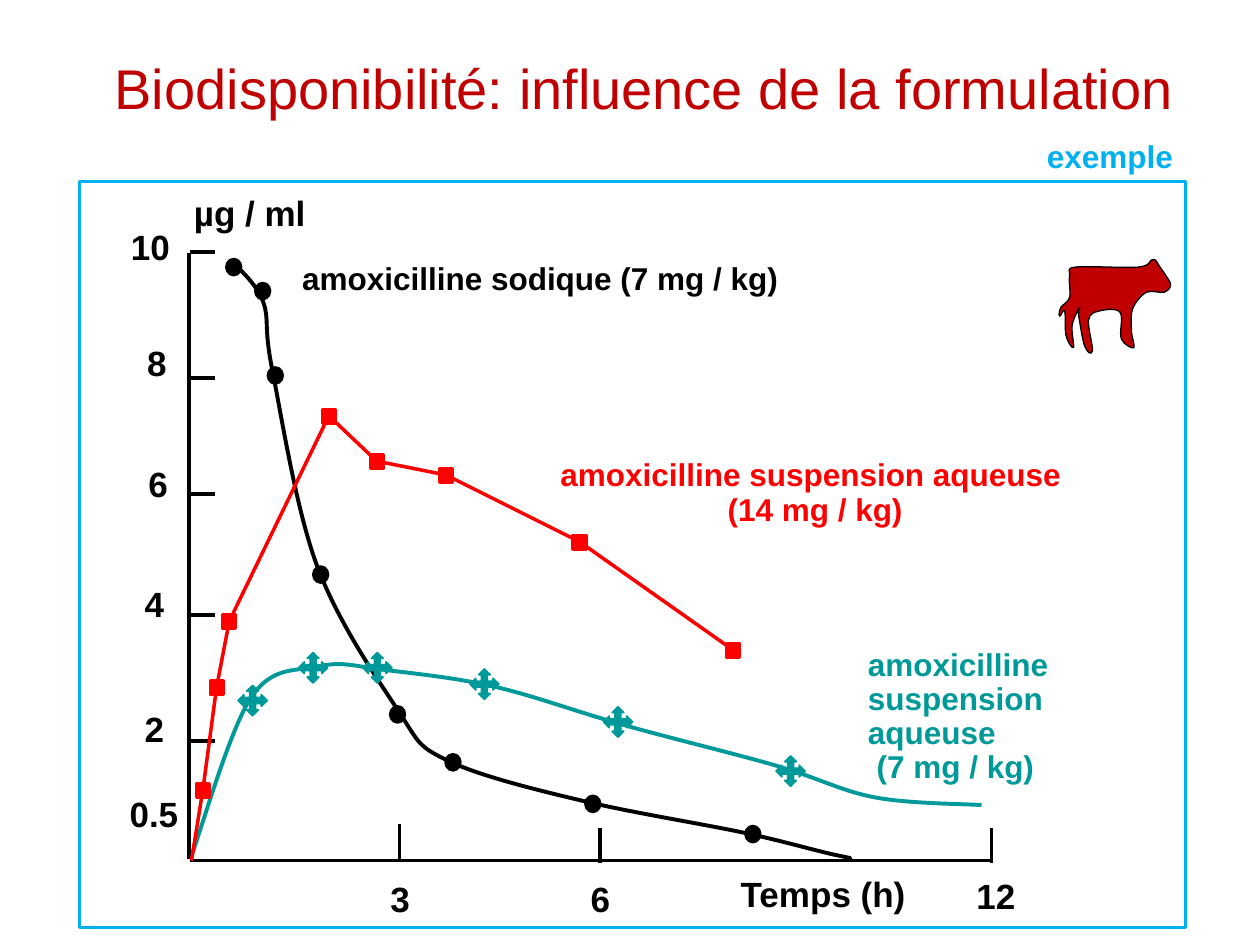
import pptx
import pptx.util
import pptx.dml.color
import pptx.enum.shapes
import pptx.enum.text
import pptx.oxml
import pptx.oxml.ns

PX = 9144
RGB = pptx.dml.color.RGBColor
BLACK = RGB(0x00, 0x00, 0x00)
RED = RGB(0xFF, 0x00, 0x00)
TEAL = RGB(0x00, 0x99, 0x99)
BLUE = RGB(0x00, 0xB0, 0xF0)
DARK = RGB(0xC0, 0x00, 0x00)
KIND = pptx.enum.shapes.MSO_SHAPE
ALIGN = pptx.enum.text.PP_ALIGN
ANCHOR = pptx.enum.text.MSO_ANCHOR
SIZE = pptx.enum.text.MSO_AUTO_SIZE
qn = pptx.oxml.ns.qn
NS = pptx.oxml.ns.nsdecls("a")

deck = pptx.Presentation()
deck.slide_width = 1000 * PX
deck.slide_height = 750 * PX
slide = deck.slides.add_slide(deck.slide_layouts[5])
shapes = slide.shapes


def write(text, left, top, wide, high, size=20, color=BLACK, bold=True,
          align=ALIGN.LEFT, space=0.9, box=None):
    fresh = box is None
    if fresh:
        box = shapes.add_textbox(0, 0, PX, PX)
    box.left, box.top, box.width, box.height = [v * PX for v in (left, top, wide, high)]
    frame = box.text_frame
    frame.word_wrap = not fresh
    frame.auto_size = SIZE.SHAPE_TO_FIT_TEXT if fresh else SIZE.NONE
    frame.text = text
    for para in frame.paragraphs:
        para.alignment = align
        para.line_spacing = space
        font = para.runs[0].font
        font.name = "Arial"
        font.size = pptx.util.Pt(size)
        font.bold = bold
        font.color.rgb = color


def style(shape, fill, line, width):
    if fill is None:
        shape.fill.background()
    else:
        shape.fill.solid()
        shape.fill.fore_color.rgb = fill
    shape.line.color.rgb = line
    shape.line.width = pptx.util.Pt(width)
    shape.shadow.inherit = False


write("Biodisponibilité: influence de la formulation", 63, 26, 897, 86, size=32,
      color=DARK, bold=False, align=ALIGN.CENTER, space=1.0, box=shapes.title)
shapes.title.text_frame.vertical_anchor = ANCHOR.MIDDLE

frame = shapes.add_shape(KIND.RECTANGLE, 63 * PX, 144 * PX, 878 * PX, 592 * PX)
style(frame, None, BLUE, 2)

slow = [(151, 682), (199, 554), (253, 529), (300, 531), (388, 544), (490, 574),
        (617, 608), (695, 633), (779, 639)]
fast = [(675, 681), (665, 679), (586, 660), (464, 636), (356, 604), (316, 564),
        (252, 450), (216, 293), (209, 240), (188, 211)]
calf = [(852, 276), (846, 266), (845, 247), (841, 251), (842, 244), (849, 236),
        (849, 219), (854, 212), (904, 212), (915, 206), (920, 211), (929, 225),
        (924, 232), (910, 232), (899, 245), (898, 262), (900, 276), (890, 269),
        (889, 248), (872, 247), (864, 254), (867, 279), (861, 275), (856, 250),
        (857, 244), (851, 258)]
for dots, fill, line, width in [(slow, None, TEAL, 2.25), (fast, None, BLACK, 2.25),
                                (calf, DARK, BLACK, 0.75)]:
    if fill is None:
        ring = [dots[0]] + dots + [dots[-1]]
    else:
        ring = [dots[-1]] + dots + dots[:2]
    pen = shapes.build_freeform(*dots[0], scale=PX)
    for a, b, c, d in zip(ring, ring[1:], ring[2:], ring[3:]):
        out = [round(q + (r - p) / 6) for p, q, r in zip(a, b, c)]
        back = [round(q - (r - p) / 6) for p, q, r in zip(b, c, d)]
        pen.add_line_segments([out, back, c], close=False)
    curve = pen.convert_to_shape()
    style(curve, fill, line, width)
    steps = list(curve.element.iter(qn("a:lnTo")))
    for n in range(0, len(steps), 3):
        bend = pptx.oxml.parse_xml(f"<a:cubicBezTo {NS}/>")
        steps[n].addprevious(bend)
        for step in steps[n:n + 3]:
            bend.append(step[0])
            step.getparent().remove(step)

discs = [(180, 206), (203, 225), (213, 292), (249, 450), (310, 561), (354, 599),
         (465, 632), (592, 656)]
blocks = [(156, 622), (167, 540), (177, 488), (256, 325), (294, 361), (349, 372),
          (455, 425), (577, 511)]
stars = [(189, 544), (237, 518), (288, 518), (373, 531), (479, 561), (616, 600)]

axes = [(150, 201, 150, 682), (151, 683, 786, 683), (317, 682, 317, 654)]
axes += [(x, 685, x, 657) for x in (476, 787)]
axes += [(151, y, 171, y) for y in (200, 300, 392, 488, 588)]
mids = [(152, 683)] + [(x + 5, y + 5) for x, y in blocks]
links = [a + b for a, b in zip(mids, mids[1:])]
for color, group in [(BLACK, axes), (RED, links)]:
    for ends in group:
        line = shapes.add_connector(pptx.enum.shapes.MSO_CONNECTOR.STRAIGHT,
                                    *[v * PX for v in ends])
        line.line.color.rgb = color
        line.line.width = pptx.util.Pt(2)
        line.element.spPr.append(pptx.oxml.parse_xml(f"<a:effectLst {NS}/>"))

for kind, spots, wide, high, color, width in [
        (KIND.OVAL, discs, 11, 12, BLACK, 2),
        (KIND.RECTANGLE, blocks, 10, 11, RED, 2),
        (KIND.QUAD_ARROW, stars, 23, 24, TEAL, 1)]:
    for x, y in spots:
        mark = shapes.add_shape(kind, x * PX, y * PX, wide * PX, high * PX)
        style(mark, color, color, width)
        for n in range(len(mark.adjustments)):
            mark.adjustments[n] = 0.2

for text, x, y, wide in [
        ("10", 94, 178, 51), ("8", 107, 270, 36), ("6", 108, 366, 36),
        ("4", 105, 461, 36), ("2", 105, 560, 36), ("0.5", 93, 628, 59),
        ("3", 300, 695, 36), ("6", 459, 695, 36), ("12", 765, 693, 51),
        ("µg / ml", 144, 151, 109), ("Temps (h)", 578, 691, 152)]:
    write(text, x, y, wide, 40)

write("amoxicilline sodique (7 mg / kg)", 230, 204, 402, 37, size=18)
write("amoxicilline suspension aqueuse\n (14 mg / kg)", 433, 360, 421, 64,
      size=18, color=RED, align=ALIGN.CENTER)
write("amoxicilline\nsuspension\naqueuse\n (7 mg / kg)", 679, 510, 167, 119,
      size=18, color=TEAL)
write("exemple", 821, 104, 121, 40, size=18, color=BLUE, space=1.0)

deck.save("out.pptx")
